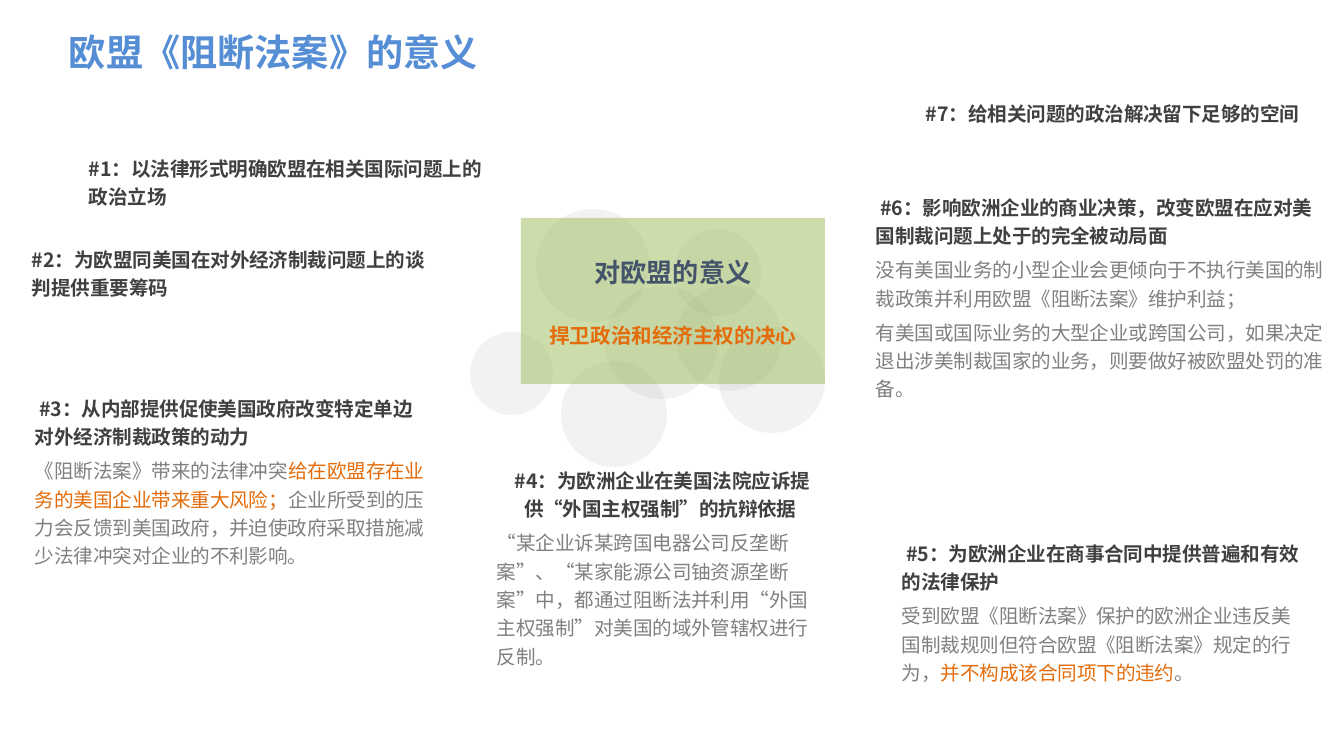
"""Build the slide on what the EU Blocking Statute means."""
from pptx import Presentation
from pptx.dml.color import RGBColor
from pptx.enum.shapes import MSO_SHAPE as SHAPE
from pptx.enum.text import MSO_ANCHOR as ANCHOR, MSO_AUTO_SIZE as AUTO, PP_ALIGN as ALIGN
from pptx.oxml.ns import qn
from pptx.util import Pt
from lxml.etree import SubElement

PX = 914400 / 134.4
FONT = "Noto Sans CJK SC"
BLUE = RGBColor(0x55, 0x8E, 0xD5)
DARK = RGBColor(0x40, 0x40, 0x40)
GRAY = RGBColor(0x80, 0x80, 0x80)
ORANGE = RGBColor(0xE4, 0x6C, 0x0A)
SLATE = RGBColor(0x44, 0x54, 0x6A)
GREEN = RGBColor(0x9B, 0xBB, 0x59)


def add_run(p, text, size=10.5, color=GRAY, bold=False):
    r = p.add_run()
    r.text = text
    r.font.size = Pt(size)
    r.font.bold = bold
    r.font.color.rgb = color
    r.font.name = FONT
    SubElement(r.font._element, qn("a:ea"), typeface=FONT)


def add_tint(kind, box, color, alpha):
    sp = s.shapes.add_shape(kind, *[round(v * PX) for v in box])
    sp.shadow.inherit = False
    sp.line.fill.background()
    sp.fill.solid()
    sp.fill.fore_color.rgb = color
    clr = sp.fill._xPr.find(qn("a:solidFill"))[0]
    SubElement(clr, qn("a:alpha"), val=str(alpha * 1000))
    return sp


prs = Presentation()
prs.slide_width, prs.slide_height = round(1344 * PX), round(756 * PX)
s = prs.slides.add_slide(prs.slide_layouts[5])

title = s.shapes.title
title.left, title.top, title.width, title.height = [round(v * PX) for v in (69, 28, 440, 46)]
tf = title.text_frame
tf.margin_left = tf.margin_top = tf.margin_right = tf.margin_bottom = 0
tf.vertical_anchor = ANCHOR.TOP
tf.auto_size = AUTO.NONE
p = tf.paragraphs[0]
p.alignment = ALIGN.LEFT
p.line_spacing = Pt(24.5)
add_run(p, "欧盟《阻断法案》的意义", size=19.9, color=BLUE, bold=True)

circles = [(536, 209, 113), (674, 229, 87), (605, 286, 113), (676, 285, 106),
           (719, 327, 106), (561, 361, 106), (470, 332, 83)]
for x, y, d in circles:
    add_tint(SHAPE.OVAL, (x, y, d, d), GRAY, 10)

sp = add_tint(SHAPE.RECTANGLE, (521, 218, 304, 166), GREEN, 50)
tf = sp.text_frame
tf.word_wrap = True
tf.vertical_anchor = ANCHOR.TOP
tf.margin_top = round(38 * PX)
p = tf.paragraphs[0]
p.alignment = ALIGN.CENTER
p.line_spacing = Pt(17)
add_run(p, "对欧盟的意义", size=14, color=SLATE, bold=True)
p = tf.add_paragraph()
p.alignment = ALIGN.CENTER
p.line_spacing = Pt(16)
p.space_before = Pt(16)
add_run(p, "捍卫政治和经济主权的决心", size=11, color=ORANGE, bold=True)

points = [
    ((89, 152, 400, 56), ALIGN.LEFT, "#1：以法律形式明确欧盟在相关国际问题上的政治立场", []),
    ((32, 243, 400, 56), ALIGN.LEFT, "#2：为欧盟同美国在对外经济制裁问题上的谈判提供重要筹码", []),
    ((35, 392, 394, 175), ALIGN.LEFT, " #3：从内部提供促使美国政府改变特定单边对外经济制裁政策的动力",
     [[("《阻断法案》带来的法律冲突", GRAY),
       ("给在欧盟存在业务的美国企业带来重大风险；", ORANGE),
       ("企业所受到的压力会反馈到美国政府，并迫使政府采取措施减少法律冲突对企业的不利影响。", GRAY)]]),
    ((497, 464, 327, 204), ALIGN.CENTER, " #4：为欧洲企业在美国法院应诉提供“外国主权强制”的抗辩依据",
     [[("“某企业诉某跨国电器公司反垄断案”、“某家能源公司铀资源垄断案”中，"
        "都通过阻断法并利用“外国主权强制”对美国的域外管辖权进行反制。", GRAY)]]),
    ((902, 537, 400, 146), ALIGN.LEFT, " #5：为欧洲企业在商事合同中提供普遍和有效的法律保护",
     [[("受到欧盟《阻断法案》保护的欧洲企业违反美国制裁规则但符合欧盟《阻断法案》规定的行为，", GRAY),
       ("并不构成该合同项下的违约", ORANGE), ("。", GRAY)]]),
    ((876, 191, 452, 209), ALIGN.LEFT, " #6：影响欧洲企业的商业决策，改变欧盟在应对美国制裁问题上处于的完全被动局面",
     [[("没有美国业务的小型企业会更倾向于不执行美国的制裁政策并利用欧盟《阻断法案》维护利益；", GRAY)],
      [("有美国或国际业务的大型企业或跨国公司，如果决定退出涉美制裁国家的业务，"
        "则要做好被欧盟处罚的准备。", GRAY)]]),
    ((926, 97, 400, 28), ALIGN.LEFT, "#7：给相关问题的政治解决留下足够的空间", []),
]
for box, align, heading, body in points:
    tf = s.shapes.add_textbox(*[round(v * PX) for v in box]).text_frame
    tf.word_wrap = True
    tf.margin_left = tf.margin_top = tf.margin_right = tf.margin_bottom = 0
    p = tf.paragraphs[0]
    p.alignment = align
    p.line_spacing = Pt(15.2)
    add_run(p, heading, color=DARK, bold=True)
    for runs in body:
        p = tf.add_paragraph()
        p.line_spacing = Pt(15.2)
        p.space_before = Pt(3)
        for text, color in runs:
            add_run(p, text, color=color)

prs.save("out.pptx")
